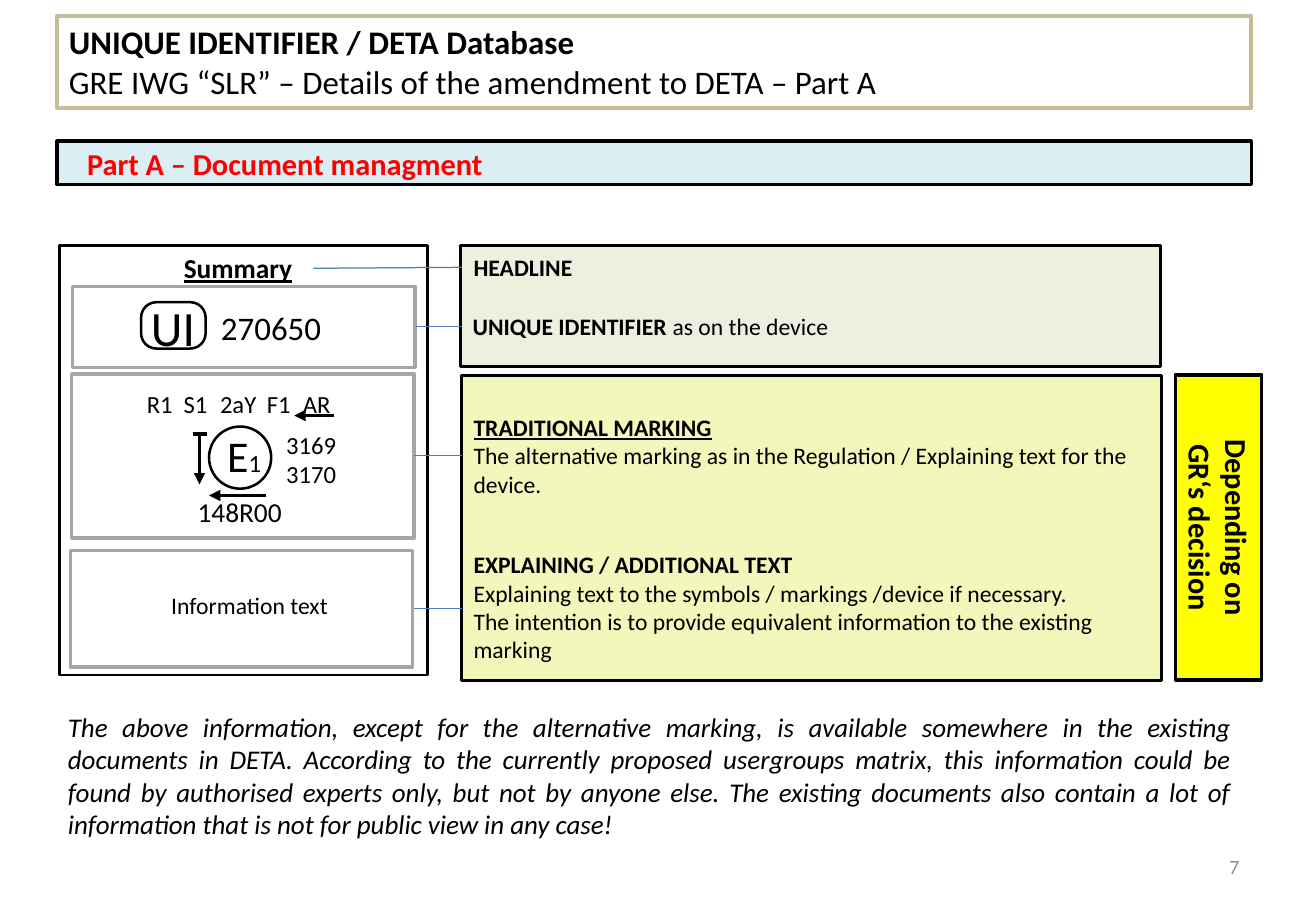
import pptx
import pptx.util
import pptx.dml.color
import pptx.enum.shapes
import pptx.enum.text
import pptx.oxml
import pptx.oxml.ns
import lxml.etree

Cm, Pt = pptx.util.Cm, pptx.util.Pt
Kind = pptx.enum.shapes.MSO_SHAPE
Align = pptx.enum.text.PP_ALIGN

HUES = {
    "black": "000000", "white": "FFFFFF", "red": "FF0000", "grey": "A6A6A6",
    "dim": "8C8C8C", "blue": "4B7EBC", "sand": "C4BD97", "sky": "DBEEF4",
    "green": "EBF1DE", "lime": "F3F7BB", "yellow": "FFFF00",
}
ALIGNS = {"l": Align.LEFT, "c": Align.CENTER, "r": Align.RIGHT, "j": Align.JUSTIFY}

BOXES = {
    "detail": (Kind.RECTANGLE, (9.65, 7.85, 14.63, 6.38), "lime", "black", 2),
    "header": (Kind.RECTANGLE, (9.63, 5.13, 14.63, 2.54), "green", "black", 2),
    "summary": (Kind.RECTANGLE, (1.24, 5.13, 7.7, 8.99), None, "black", 1.5),
    "badge": (Kind.ROUNDED_RECTANGLE, (2.95, 6.32, 1.35, 0.97), "white", "black", 1.5),
    "marking": (Kind.RECTANGLE, (1.5, 7.82, 7.16, 3.43), None, "grey", 2),
    "unique": (Kind.RECTANGLE, (1.52, 5.99, 7.16, 1.7), None, "grey", 2),
    "info": (Kind.RECTANGLE, (1.47, 11.51, 7.16, 2.44), None, "grey", 2),
    "circle": (Kind.OVAL, (4.37, 8.92, 1.3, 1.3), None, "black", 1.5),
    "title": (Kind.RECTANGLE, (1.19, 0.33, 24.97, 1.93), None, "sand", 2.25),
    "bar": (Kind.RECTANGLE, (1.19, 2.95, 24.97, 0.91), "sky", "black", 2),
    "side": (Kind.RECTANGLE, (22.28, 10.13, 6.38, 1.8), "yellow", "black", 2.25),
}

NOTE = (
    "The above information, except for the alternative marking, is available "
    "somewhere in the existing documents in DETA. According to the currently "
    "proposed usergroups matrix, this information could be found by authorised "
    "experts only, but not by anyone else. The existing documents also contain "
    "a lot of information that is not for public view in any case!"
)

TEXTS = [
    ("title", "l", 19.5, "black", [
        [("UNIQUE IDENTIFIER / DETA Database", "b")],
        [("GRE IWG “SLR” – Details of the amendment to DETA – Part A", "")]]),
    ((1.57, 2.92, 24.56, 1.02), "l", 18, "red", [[("Part A – Document managment", "b")]]),
    ((3.4, 5.13, 3.15, 0.94), "c", 16.2, "black", [[("Summary", "bu")]]),
    ((2.79, 6.1, 1.65, 1.5), "c", 29.2, "black", [[("UI", "")]]),
    ((4.37, 6.3, 3, 1.09), "l", 19.5, "black", [[("270650", "")]]),
    ((2.82, 8, 4.8, 0.89), "l", 14.6, "black", [[("R1\tS1\t2aY\tF1\tAR", "")]]),
    ((4.5, 8.84, 1.3, 1.37), "l", 26, "black", [[("E", ""), ("1", "s")]]),
    ((5.72, 8.86, 1.57, 1.5), "c", 14.6, "black", [[("3169", "")], [("3170", "")]]),
    ((3.84, 10.24, 2.34, 1.04), "c", 16.2, "black", [[("148R00", "")]]),
    ((3.33, 12.24, 4.06, 0.86), "l", 14, "black", [[("Information text", "")]]),
    ((9.65, 5.16, 14.6, 0.86), "l", 14, "black", [[("HEADLINE", "b")]]),
    ((9.63, 6.4, 14.6, 0.86), "l", 14, "black", [
        [("UNIQUE IDENTIFIER", "b"), (" as on the device", "")]]),
    ((9.65, 8.51, 14.6, 2.06), "l", 14, "black", [
        [("TRADITIONAL MARKING", "bu")],
        [("The alternative marking as in the Regulation / Explaining text for the device.", "")]]),
    ((9.65, 11.38, 14.58, 2.64), "l", 14, "black", [
        [("EXPLAINING / ADDITIONAL TEXT", "b")],
        [("Explaining text to the symbols / markings /device if necessary.", "")],
        [("The intention is to provide equivalent information to the existing marking", "")]]),
    ("side", "c", 18, "black", [[("Depending on", "b")], [("GR‘s decision", "b")]]),
    ((1.17, 14.73, 24.82, 3), "j", 16, "black", [[(NOTE, "i")]]),
    ((19.96, 17.75, 6.2, 0.81), "r", 12, "dim", [[("7", "")]]),
]
TABS = (0.77, 1.53, 2.51, 3.26)
SMALL = 14.6

LINES = [
    ((9.65, 5.59, 6.55, 5.61), "blue", 0.75, False),
    ((9.65, 6.83, 8.69, 6.83), "blue", 0.75, False),
    ((9.65, 9.53, 8.66, 9.53), "blue", 0.75, False),
    ((9.65, 12.73, 8.66, 12.73), "blue", 0.75, False),
    ((6.99, 8.69, 6.15, 8.69), "black", 2.25, True),
    ((4.17, 9.09, 4.17, 10.13), "black", 2.25, True),
    ((4.04, 9.07, 4.32, 9.07), "black", 2.25, False),
    ((5.56, 10.36, 4.37, 10.36), "black", 2.25, True),
]


def hue(name):
    return pptx.dml.color.RGBColor.from_string(HUES[name])


def node(root, tag, **attrs):
    return lxml.etree.SubElement(root, pptx.oxml.ns.qn(tag), **attrs)


def draw_box(slide, kind, at, fill, line, width):
    shape = slide.shapes.add_shape(kind, *map(Cm, at))
    shape.shadow.inherit = False
    if fill:
        shape.fill.solid()
        shape.fill.fore_color.rgb = hue(fill)
    else:
        shape.fill.background()
    shape.line.color.rgb = hue(line)
    shape.line.width = Pt(width)
    return shape


def draw_line(slide, ends, color, width, arrow):
    line = slide.shapes.add_connector(
        pptx.enum.shapes.MSO_CONNECTOR.STRAIGHT, *map(Cm, ends))
    line.line.color.rgb = hue(color)
    line.line.width = Pt(width)
    if arrow:
        node(line.line._get_or_add_ln(), "a:tailEnd", type="triangle")
    node(line._element.spPr, "a:effectLst")


def write(frame, align, size, color, paras):
    frame.word_wrap = True
    frame.vertical_anchor = pptx.enum.text.MSO_ANCHOR.TOP
    for index, runs in enumerate(paras):
        para = frame.add_paragraph() if index else frame.paragraphs[0]
        para.alignment = ALIGNS[align]
        if "\t" in runs[0][0]:
            stops = node(para._p.get_or_add_pPr(), "a:tabLst")
            for stop in TABS:
                node(stops, "a:tab", pos=str(Cm(stop)), algn="l")
        for text, style in runs:
            run = para.add_run()
            run.text = text
            font = run.font
            font.name = "Calibri"
            font.size = Pt(SMALL if "s" in style else size)
            font.color.rgb = hue(color)
            font.bold = "b" in style
            font.italic = "i" in style
            font.underline = "u" in style


def main():
    deck = pptx.Presentation()
    deck.slide_width, deck.slide_height = Cm(27.51), Cm(19.05)
    slide = deck.slides.add_slide(deck.slide_layouts[6])
    shapes = {name: draw_box(slide, *row) for name, row in BOXES.items()}
    shapes["side"].rotation = 90
    shapes["badge"].adjustments[0] = 0.33
    for row in LINES:
        draw_line(slide, *row)
    for host, *rest in TEXTS:
        if host in shapes:
            shape = shapes[host]
        else:
            shape = slide.shapes.add_textbox(*map(Cm, host))
        write(shape.text_frame, *rest)
    deck.save("out.pptx")


if __name__ == "__main__":
    main()
